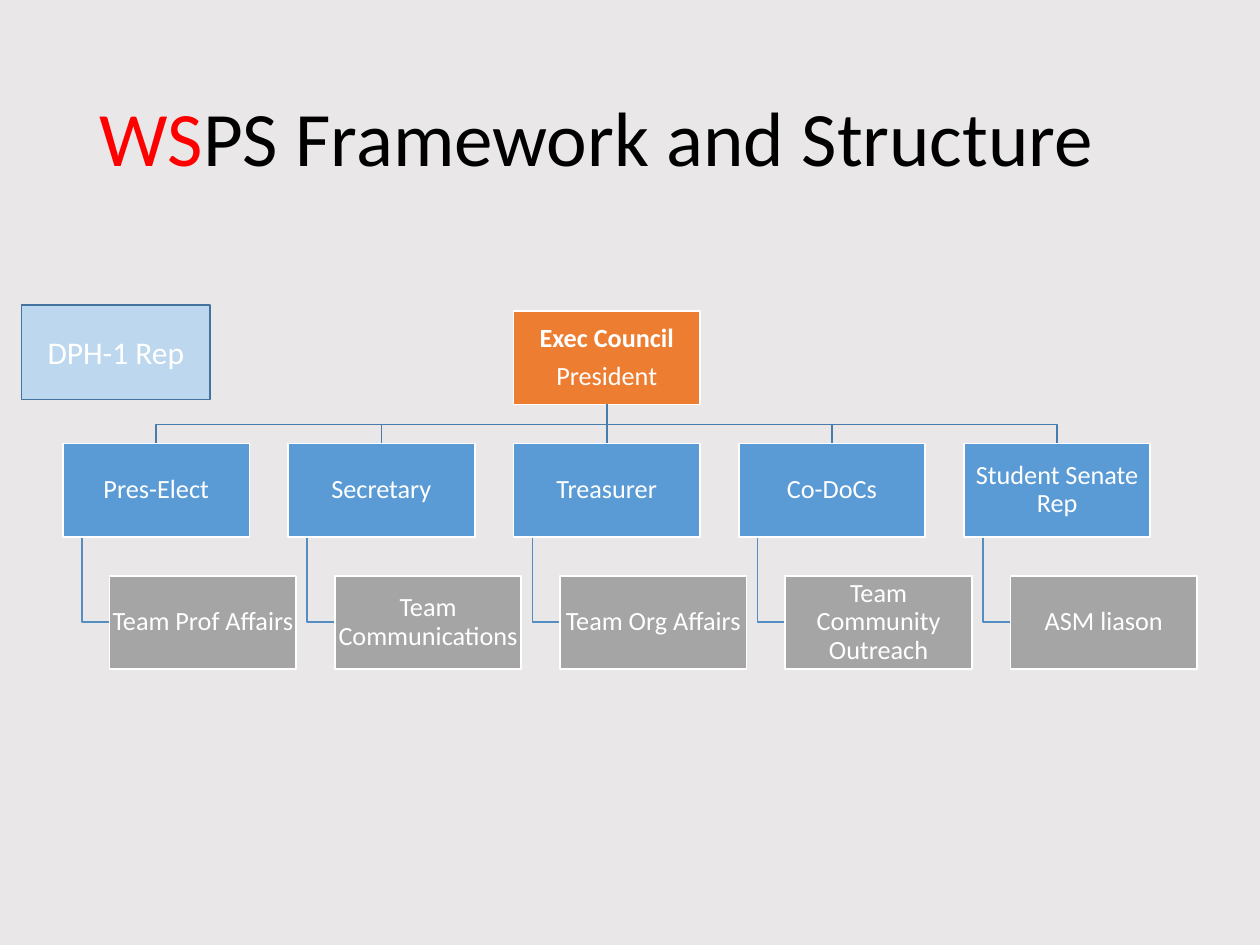
from dataclasses import dataclass

from pptx import Presentation
from pptx.dml.color import RGBColor
from pptx.enum import shapes, text
from pptx.oxml import parse_xml
from pptx.oxml.ns import nsdecls
from pptx.util import Inches, Pt


@dataclass(frozen=True)
class Theme:
    font: str = "Calibri"
    background: str = "E9E7E7"
    title: str = "000000"
    accent: str = "FF0000"
    white: str = "FFFFFF"
    council: str = "ED7D31"
    officer: str = "5B9BD5"
    team: str = "A5A5A5"
    rep: str = "BDD7EE"
    rep_border: str = "43739E"
    officer_line: str = "497CAB"
    team_line: str = "538DC1"
    title_size: int = 44
    rep_size: int = 18
    box_size: int = 15
    line_width: int = 1


@dataclass(frozen=True)
class Box:
    left: float
    top: float
    lines: tuple[str, ...]
    fill: str
    width: float = 1.48
    height: float = 0.74

    @property
    def center(self) -> float:
        return self.left + self.width / 2

    @property
    def middle(self) -> float:
        return self.top + self.height / 2

    @property
    def bottom(self) -> float:
        return self.top + self.height


@dataclass(frozen=True)
class Branch:
    officer: str
    team: str


THEME = Theme()
BRANCHES = (
    Branch("Pres-Elect", "Team Prof Affairs"),
    Branch("Secretary", "Team Communications"),
    Branch("Treasurer", "Team Org Affairs"),
    Branch("Co-DoCs", "Team Community Outreach"),
    Branch("Student Senate Rep", "ASM liason"),
)
FIRST_LEFT, LAST_LEFT = 0.5, 7.65
PITCH = (LAST_LEFT - FIRST_LEFT) / (len(BRANCHES) - 1)
COUNCIL_TOP, OFFICER_TOP, TEAM_TOP = 2.47, 3.52, 4.57
BUS_Y = 3.37
TEAM_INDENT = 0.37
STEM_INDENT = 0.15


def rgb(value: str) -> RGBColor:
    return RGBColor.from_string(value)


def style_line(line, color: str) -> None:
    line.color.rgb = rgb(color)
    line.width = Pt(THEME.line_width)


def add_title(page) -> None:
    title = page.shapes.title
    title.left, title.top = Inches(0.69), Inches(0.4)
    title.width, title.height = Inches(8.62), Inches(1.45)
    frame = title.text_frame
    frame.word_wrap = True
    frame.auto_size = text.MSO_AUTO_SIZE.NONE
    frame.vertical_anchor = text.MSO_ANCHOR.MIDDLE
    para = frame.paragraphs[0]
    para.alignment = text.PP_ALIGN.LEFT
    para.line_spacing = 0.9
    para.font.name, para.font.size = THEME.font, Pt(THEME.title_size)
    for words, color in (("WS", THEME.accent), ("PS Framework and Structure", THEME.title)):
        span = para.add_run()
        span.text = words
        span.font.color.rgb = rgb(color)


def add_box(page, box: Box, border: str = THEME.white, size: int = THEME.box_size,
            inset: float = 0.01, line_spacing: float = 0.9):
    shape = page.shapes.add_shape(
        shapes.MSO_SHAPE.RECTANGLE,
        Inches(box.left), Inches(box.top), Inches(box.width), Inches(box.height))
    shape.shadow.inherit = False
    shape.fill.solid()
    shape.fill.fore_color.rgb = rgb(box.fill)
    style_line(shape.line, border)
    frame = shape.text_frame
    frame.word_wrap = True
    frame.vertical_anchor = text.MSO_ANCHOR.MIDDLE
    frame.margin_left = frame.margin_right = Inches(inset)
    frame.margin_top = frame.margin_bottom = Inches(min(inset, 0.05))
    for index, words in enumerate(box.lines):
        para = frame.add_paragraph() if index else frame.paragraphs[0]
        para.text = words
        para.alignment = text.PP_ALIGN.CENTER
        para.line_spacing = line_spacing
        para.font.name, para.font.size = THEME.font, Pt(size)
        para.font.color.rgb = rgb(THEME.white)
        if index < len(box.lines) - 1:
            para.font.bold = True
            para.space_after = Pt(5.25)
    return shape


def add_elbow(page, points: list[tuple[float, float]], color: str) -> None:
    """Draw an open line with right-angled bends through the points."""
    start, *rest = [(Inches(x), Inches(y)) for x, y in points]
    builder = page.shapes.build_freeform(*start)
    builder.add_line_segments(rest, close=False)
    elbow = builder.convert_to_shape()
    elbow.shadow.inherit = False
    elbow.fill.background()
    style_line(elbow.line, color)


def add_straight(page, upper, lower, color: str) -> None:
    """Join the bottom of one box to the top of another."""
    line = page.shapes.add_connector(shapes.MSO_CONNECTOR.STRAIGHT, 0, 0, 0, 0)
    line.begin_connect(upper, 2)
    line.end_connect(lower, 0)
    style_line(line.line, color)
    line._element.spPr.append(parse_xml(f"<a:effectLst {nsdecls('a')}/>"))


def add_chart_tree(page) -> None:
    lefts = [FIRST_LEFT + PITCH * index for index in range(len(BRANCHES))]
    officers = [Box(left, OFFICER_TOP, (branch.officer,), THEME.officer)
                for left, branch in zip(lefts, BRANCHES)]
    teams = [Box(left + TEAM_INDENT, TEAM_TOP, (branch.team,), THEME.team)
             for left, branch in zip(lefts, BRANCHES)]
    center = len(BRANCHES) // 2
    council = Box(lefts[center], COUNCIL_TOP, ("Exec Council", "President"), THEME.council)

    for index, (officer, team) in enumerate(zip(officers, teams)):
        stem = officer.left + STEM_INDENT
        add_elbow(page, [(stem, officer.bottom), (stem, team.middle),
                         (team.left, team.middle)], THEME.team_line)
        if index != center:
            add_elbow(page, [(council.center, council.bottom), (council.center, BUS_Y),
                             (officer.center, BUS_Y), (officer.center, officer.top)],
                      THEME.officer_line)

    council_shape = add_box(page, council)
    officer_shapes = [add_box(page, officer) for officer in officers]
    for team in teams:
        add_box(page, team)
    add_straight(page, council_shape, officer_shapes[center], THEME.officer_line)


def main() -> None:
    deck = Presentation()
    deck.slide_width, deck.slide_height = Inches(10), Inches(7.5)
    page = deck.slides.add_slide(deck.slide_layouts.get_by_name("Title Only"))
    page.background.fill.solid()
    page.background.fill.fore_color.rgb = rgb(THEME.background)
    add_title(page)
    add_chart_tree(page)
    rep = Box(0.17, 2.42, ("DPH-1 Rep",), THEME.rep, width=1.5, height=0.75)
    add_box(page, rep, THEME.rep_border, THEME.rep_size, inset=0.1, line_spacing=1.0)
    deck.save("out.pptx")


if __name__ == "__main__":
    main()
